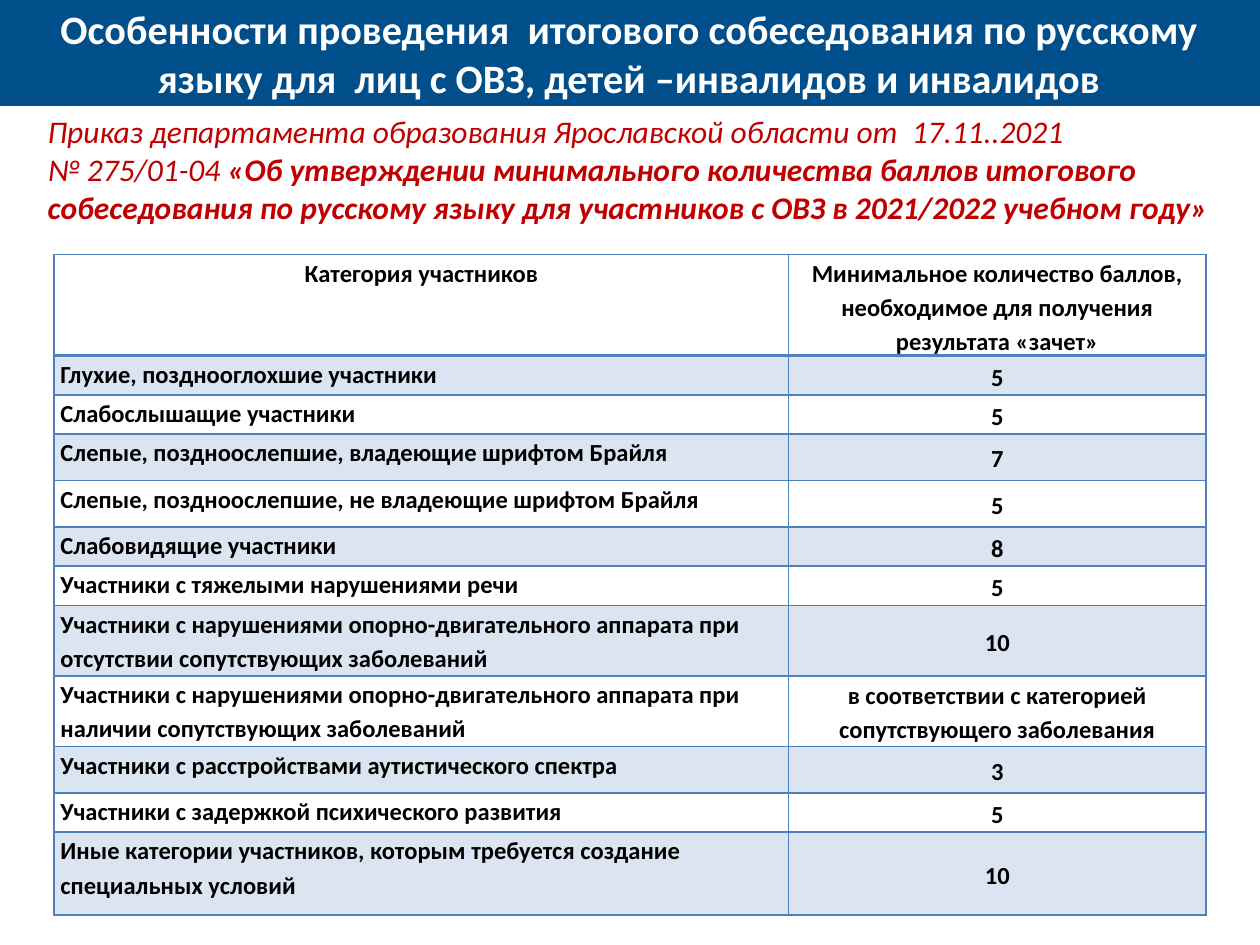
from lxml import etree
from pptx import Presentation
from pptx import util as u
from pptx.dml.color import RGBColor
from pptx.enum import shapes, text
from pptx.oxml import ns

NAVY = RGBColor(0x00, 0x4F, 0x8A)
RED = RGBColor(0xC0, 0x00, 0x00)
BLUE = RGBColor(0x4F, 0x81, 0xBD)
WHITE = RGBColor(0xFF, 0xFF, 0xFF)
BLACK = RGBColor(0x00, 0x00, 0x00)

TITLE = ("Особенности проведения  итогового собеседования по русскому "
         "языку для  лиц с ОВЗ, детей –инвалидов и инвалидов")
ORDER_DATE = "Приказ департамента образования Ярославской области от  17.11..2021"
ORDER_NUMBER = "№ 275/01-04 "
ORDER_NAME = ("«Об утверждении минимального количества баллов итогового собеседования "
              "по русскому языку для участников с ОВЗ в 2021/2022 учебном году»")
COLUMN_WIDTHS = (5.83, 3.31)
SCORES = [
    (0.62, "Категория участников",
     "Минимальное количество баллов, необходимое для получения результата «зачет»"),
    (0.31, "Глухие, позднооглохшие участники", "5"),
    (0.31, "Слабослышащие участники", "5"),
    (0.37, "Слепые, поздноослепшие, владеющие шрифтом Брайля", "7"),
    (0.37, "Слепые, поздноослепшие, не владеющие шрифтом Брайля", "5"),
    (0.31, "Слабовидящие участники", "8"),
    (0.31, "Участники с тяжелыми нарушениями речи", "5"),
    (0.56, "Участники с нарушениями опорно-двигательного аппарата "
           "при отсутствии сопутствующих заболеваний", "10"),
    (0.56, "Участники с нарушениями опорно-двигательного аппарата "
           "при наличии сопутствующих заболеваний",
     "в соответствии с категорией сопутствующего заболевания"),
    (0.37, "Участники с расстройствами аутистического спектра", "3"),
    (0.31, "Участники с задержкой психического развития", "5"),
    (0.66, "Иные категории участников, которым требуется создание специальных условий", "10"),
]


def write(paragraph, content, size=14, color=BLACK, bold=False, italic=False,
          centered=False, spacing=None):
    """Append a formatted run to the paragraph."""
    run = paragraph.add_run()
    run.text = content
    font = run.font
    font.name, font.size, font.bold, font.italic = "Calibri", u.Pt(size), bold, italic
    font.color.rgb = color
    paragraph.alignment = text.PP_ALIGN.CENTER if centered else text.PP_ALIGN.LEFT
    if spacing:
        paragraph.line_spacing = spacing


class SlideBuilder:
    """Draws the slide elements in one shared style."""

    def __init__(self, slide, accent=BLUE):
        self.slide = slide
        self.accent = accent

    def banner(self, box, content):
        """Add the filled title bar."""
        shape = self.slide.shapes.add_shape(shapes.MSO_SHAPE.RECTANGLE, *map(u.Inches, box))
        shape.shadow.inherit = False
        shape.fill.solid()
        shape.fill.fore_color.rgb = NAVY
        shape.line.fill.background()
        frame = shape.text_frame
        frame.word_wrap = True
        frame.vertical_anchor = text.MSO_ANCHOR.MIDDLE
        write(frame.paragraphs[0], content, size=23, color=WHITE, bold=True, centered=True)

    def order(self, box):
        """Add the reference to the order."""
        frame = self.slide.shapes.add_textbox(*map(u.Inches, box)).text_frame
        frame.word_wrap = True
        frame.auto_size = text.MSO_AUTO_SIZE.SHAPE_TO_FIT_TEXT
        paragraph = frame.paragraphs[0]
        style = {"size": 18, "color": RED, "italic": True}
        write(paragraph, ORDER_DATE, **style)
        paragraph.add_line_break()
        write(paragraph, ORDER_NUMBER, **style)
        write(paragraph, ORDER_NAME, bold=True, **style)

    def table(self, box, widths, rows):
        """Add the table of minimum scores."""
        table = self.slide.shapes.add_table(
            len(rows), len(widths), *map(u.Inches, box)).table
        table.first_row = table.horz_banding = False
        for column, width in zip(table.columns, widths):
            column.width = u.Inches(width)
        for index, (height, *contents) in enumerate(rows):
            table.rows[index].height = u.Inches(height)
            for column, content in enumerate(contents):
                self.cell(table.cell(index, column), content, index, column)

    def cell(self, cell, content, row, column):
        """Fill and format one table cell."""
        cell.margin_left = cell.margin_right = u.Inches(0.05)
        cell.margin_top = cell.margin_bottom = 0
        if row and column:
            cell.vertical_anchor = text.MSO_ANCHOR.MIDDLE
        write(cell.text_frame.paragraphs[0], content, bold=True,
              centered=row == 0 or column == 1, spacing=1.15)
        properties = cell._tc.get_or_add_tcPr()
        if row % 2:
            cell.fill.solid()
            cell.fill.fore_color.rgb = self.accent
            color = properties.find(".//" + ns.qn("a:srgbClr"))
            etree.SubElement(color, ns.qn("a:alpha"), val="20000")
        else:
            cell.fill.background()
        for position, side in enumerate("LRTB"):
            thick = (row == 0 and side == "B") or (row == 1 and side == "T")
            self.border(properties, position, side, 2 if thick else 1)

    def border(self, properties, position, side, width):
        """Insert one cell border."""
        line = etree.Element(ns.qn("a:ln" + side), w=str(u.Pt(width)))
        fill = etree.SubElement(line, ns.qn("a:solidFill"))
        etree.SubElement(fill, ns.qn("a:srgbClr"), val=str(self.accent))
        properties.insert(position, line)


def main():
    """Build and save the presentation."""
    presentation = Presentation()
    presentation.slide_width, presentation.slide_height = u.Inches(10), u.Inches(7.5)
    builder = SlideBuilder(presentation.slides.add_slide(presentation.slide_layouts[6]))
    builder.banner((0, 0, 10, 0.84), TITLE)
    builder.order((0.28, 0.84, 9.45, 1.01))
    builder.table((0.43, 2.02, 9.13, 5.27), COLUMN_WIDTHS, SCORES)
    presentation.save("out.pptx")


if __name__ == "__main__":
    main()
